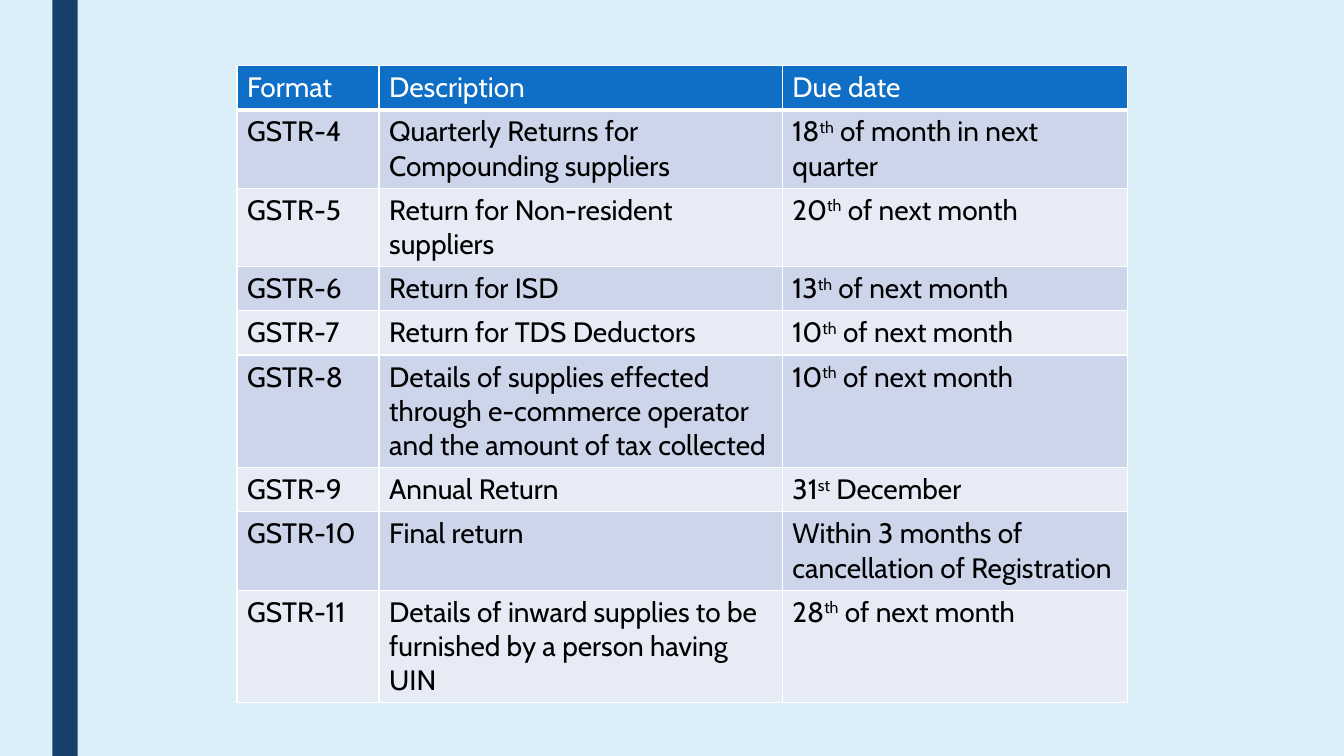
from dataclasses import dataclass

from lxml import etree
from pptx import Presentation
from pptx import util as u
from pptx.dml.color import RGBColor
from pptx.enum import shapes
from pptx.oxml.ns import qn


@dataclass(frozen=True)
class Theme:
    background: str = "DBEFF9"
    stripe: str = "17406D"
    header: str = "0F6FC6"
    bands: tuple[str, str] = ("CCD5EA", "E7EBF5")
    border: str = "FFFFFF"
    header_text: str = "FFFFFF"
    body_text: str = "000000"
    font: str = "Cabin"
    size: int = 20


@dataclass(frozen=True)
class GstReturn:
    form: str
    description: str
    due: str
    ordinal: str = ""
    due_rest: str = ""


THEME = Theme()
COLUMN_WIDTHS = (1.41, 4, 3.42)
ROW_HEIGHT = 0.41
NEXT_MONTH = " of next month"
RETURNS = (
    GstReturn("Format", "Description", "Due date"),
    GstReturn("GSTR-4", "Quarterly Returns for Compounding suppliers",
              "18", "th", " of month in next quarter"),
    GstReturn("GSTR-5", "Return for Non-resident suppliers", "20", "th", NEXT_MONTH),
    GstReturn("GSTR-6", "Return for ISD", "13", "th", NEXT_MONTH),
    GstReturn("GSTR-7", "Return for TDS Deductors", "10", "th", NEXT_MONTH),
    GstReturn("GSTR-8", "Details of supplies effected through e-commerce operator "
              "and the amount of tax collected", "10", "th", NEXT_MONTH),
    GstReturn("GSTR-9", "Annual Return", "31", "st", " December"),
    GstReturn("GSTR-10", "Final return", "Within 3 months of cancellation of Registration"),
    GstReturn("GSTR-11", "Details of inward supplies to be furnished by a person having UIN",
              "28", "th", NEXT_MONTH),
)


def paint(fill, color: str) -> None:
    fill.solid()
    fill.fore_color.rgb = RGBColor.from_string(color)


def add_borders(cell, bottom: float) -> None:
    properties = cell._tc.get_or_add_tcPr()
    widths = {"a:lnL": 1, "a:lnR": 1, "a:lnT": 1, "a:lnB": bottom}
    for side, width in widths.items():
        edge = etree.SubElement(properties, qn(side), w=str(u.Pt(width)))
        solid = etree.SubElement(edge, qn("a:solidFill"))
        etree.SubElement(solid, qn("a:srgbClr"), val=THEME.border)


def write(cell, parts: tuple[str, ...], color: str) -> None:
    styles = {"name": THEME.font, "size": u.Pt(THEME.size)}
    for position, part in enumerate(parts):
        if not part:
            continue
        run = cell.text_frame.paragraphs[0].add_run()
        run.text = part
        for attribute, value in styles.items():
            setattr(run.font, attribute, value)
        run.font.color.rgb = RGBColor.from_string(color)
        if position == 1:
            run._r.get_or_add_rPr().set("baseline", "30000")


def add_stripe(slide) -> None:
    stripe = slide.shapes.add_shape(
        shapes.MSO_SHAPE.RECTANGLE, u.Inches(0.52), 0, u.Inches(0.25), u.Inches(7.5))
    stripe.shadow.inherit = False
    paint(stripe.fill, THEME.stripe)
    stripe.line.fill.background()


def add_schedule(slide) -> None:
    schedule = slide.shapes.add_table(
        len(RETURNS), len(COLUMN_WIDTHS), u.Inches(2.35), u.Inches(0.65),
        u.Inches(sum(COLUMN_WIDTHS)), u.Inches(ROW_HEIGHT * len(RETURNS))).table
    for column, width in zip(schedule.columns, COLUMN_WIDTHS):
        column.width = u.Inches(width)
    for index, (row, entry) in enumerate(zip(schedule.rows, RETURNS)):
        row.height = u.Inches(ROW_HEIGHT)
        is_header = index == 0
        background = THEME.header if is_header else THEME.bands[(index - 1) % 2]
        color = THEME.header_text if is_header else THEME.body_text
        contents = ((entry.form,), (entry.description,),
                    (entry.due, entry.ordinal, entry.due_rest))
        for cell, parts in zip(row.cells, contents):
            add_borders(cell, 3 if is_header else 1)
            paint(cell.fill, background)
            write(cell, parts, color)


def main() -> None:
    deck = Presentation()
    deck.slide_width, deck.slide_height = u.Inches(13.33), u.Inches(7.5)
    slide = deck.slides.add_slide(deck.slide_layouts[6])
    paint(slide.background.fill, THEME.background)
    add_stripe(slide)
    add_schedule(slide)
    deck.save("out.pptx")


if __name__ == "__main__":
    main()
